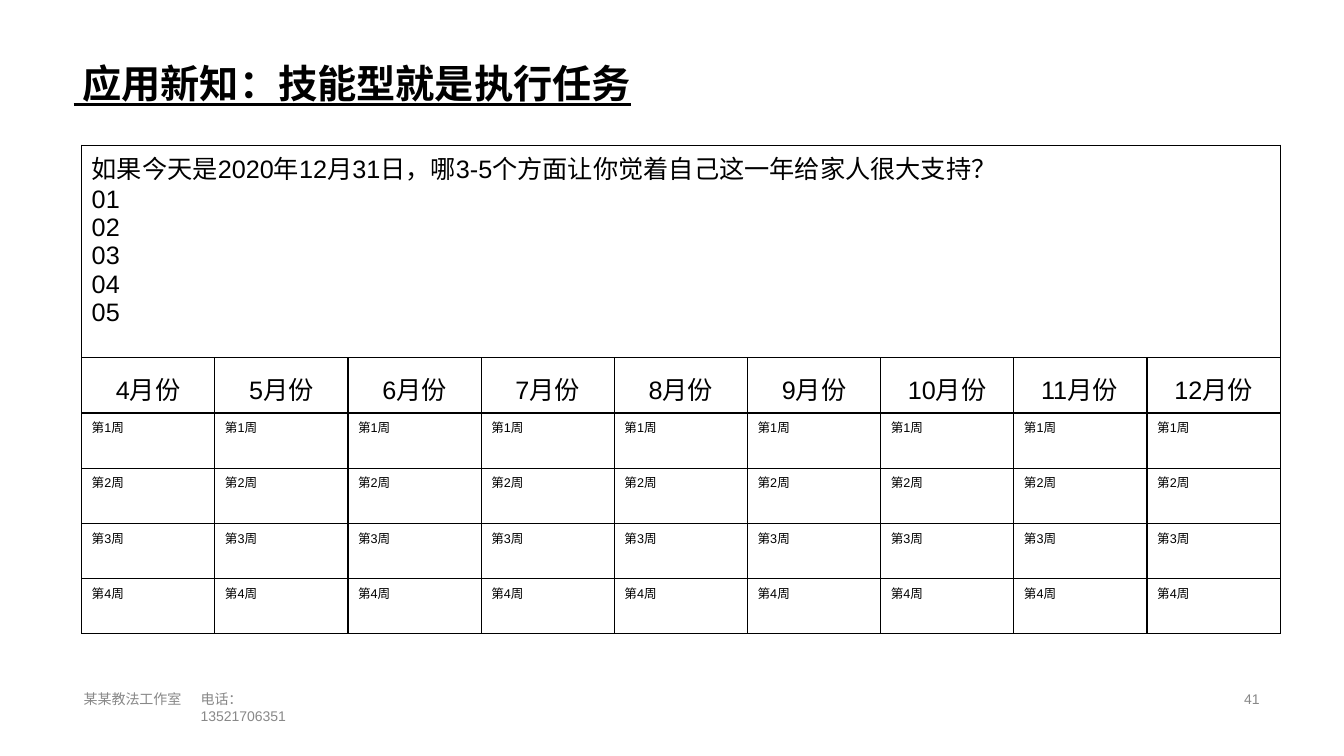
from lxml import etree
from pptx import Presentation, util as u
from pptx.dml.color import RGBColor
from pptx.enum import text as t
from pptx.oxml import ns

COLS, ROWS = 133.3, 75


def paint(code):
    return RGBColor.from_string(code)


class Page:
    latin, asian, ink, grey = "Arial", "Noto Sans CJK SC", "000000", "888888"

    def __init__(self, deck):
        self.deck = deck
        self.slide = deck.slides.add_slide(deck.slide_layouts[5])

    def span(self, *cells):
        sizes = (self.deck.slide_width / COLS, self.deck.slide_height / ROWS)
        return [u.Emu(round(n * sizes[i % 2])) for i, n in enumerate(cells)]

    def style(self, frame, size, color, latin=None, bold=False, line=False):
        for para in frame.paragraphs:
            para.alignment = t.PP_ALIGN.LEFT
            for run in para.runs:
                font = run.font
                font.size, font.bold, font.underline = u.Pt(size), bold, line
                font.color.rgb = paint(color)
                font.name = latin or self.latin
                etree.SubElement(font._element, ns.qn("a:ea"), typeface=self.asian)

    def inset(self, item, left, top):
        item.margin_left, item.margin_top = self.span(left, top)
        item.margin_right = item.margin_bottom = 0
        item.vertical_anchor = t.MSO_ANCHOR.TOP

    def title(self, words, *place):
        head = self.slide.shapes.title
        head.left, head.top, head.width, head.height = self.span(*place)
        frame = head.text_frame
        frame.text = words
        frame.auto_size = t.MSO_AUTO_SIZE.NONE
        self.inset(frame, 0.1, 0.1)
        self.style(frame, 28, self.ink, "Times New Roman", True, True)

    def note(self, words, *place):
        frame = self.slide.shapes.add_textbox(*self.span(*place)).text_frame
        frame.text, frame.word_wrap = words, True
        self.inset(frame, 0.1, 0.2)
        self.style(frame, 10, self.grey)

    def cell(self, cell, words, size, left, top):
        cell.text = words
        self.inset(cell, left, top)
        self.style(cell.text_frame, size, self.ink)

    def edge(self, cell):
        props = cell._tc.get_or_add_tcPr()
        for side in "LRTB":
            line = etree.SubElement(props, ns.qn("a:ln" + side), w=str(u.Pt(1)))
            fill = etree.SubElement(line, ns.qn("a:solidFill"))
            etree.SubElement(fill, ns.qn("a:srgbClr"), val=self.ink)
        cell.fill.background()

    def table(self, ask, months, weeks, place, tall):
        rows = len(weeks) + 2
        grid = self.slide.shapes.add_table(rows, len(months), *self.span(*place)).table
        grid.first_row = grid.horz_banding = False
        grid.rows[0].height = self.span(0, tall)[1]
        for row in range(1, rows):
            grid.rows[row].height = self.span(0, (place[3] - tall) / (rows - 1))[1]
        for cell in grid.iter_cells():
            self.edge(cell)
        grid.cell(0, 0).merge(grid.cell(0, len(months) - 1))
        self.cell(grid.cell(0, 0), ask, 18, 1, 0.4)
        for col, month in enumerate(months):
            left = 3.4 if month < 10 else 2.7
            self.cell(grid.cell(1, col), f"{month}月份", 18, left, 1.2)
            for row, week in enumerate(weeks, 2):
                self.cell(grid.cell(row, col), f"第{week}周", 9, 1, 0.5)


def main():
    deck = Presentation()
    deck.slide_width, deck.slide_height = u.Inches(13.33), u.Inches(7.5)
    page = Page(deck)
    page.title(" 应用新知：技能型就是执行任务", 7.2, 5.8, 118.9, 4.9)
    ask = "如果今天是2020年12月31日，哪3-5个方面让你觉着自己这一年给家人很大支持？"
    lines = [ask] + [f"{n:02}" for n in range(1, 6)]
    page.table("\n".join(lines), range(4, 13), range(1, 5), (8.1, 14.4, 118.9, 48.5), 21.1)
    page.note("某某教法工作室", 8.2, 68.3, 11, 2.1)
    page.note("电话：13521706351", 19.8, 68.3, 12, 2.1)
    page.note("41", 123.3, 68.3, 3, 2.1)
    deck.save("out.pptx")


if __name__ == "__main__":
    main()
